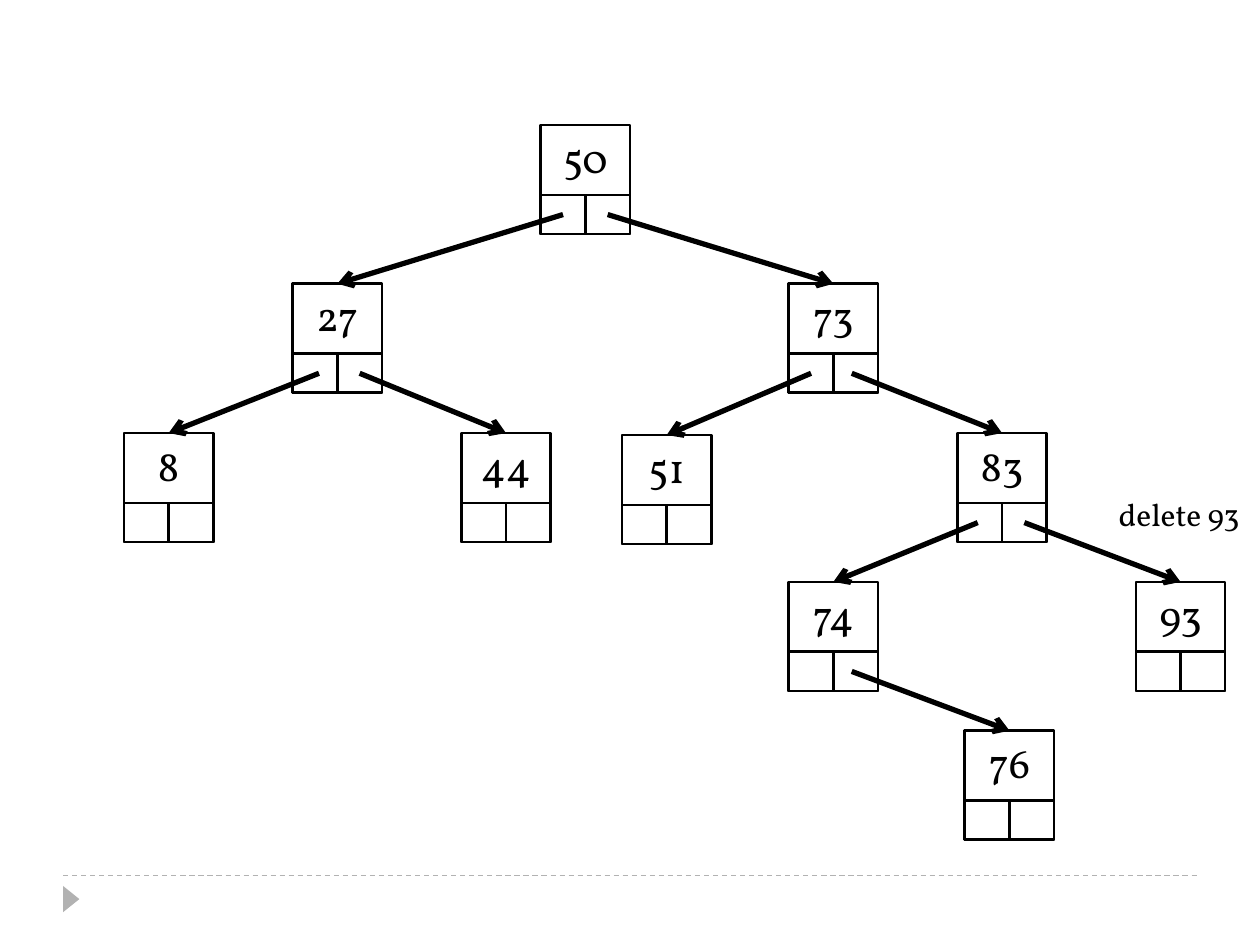
from pptx import Presentation
from pptx.dml.color import RGBColor
from pptx.enum.dml import MSO_LINE
from pptx.enum.shapes import MSO_CONNECTOR, MSO_SHAPE
from pptx.enum.text import MSO_ANCHOR, MSO_AUTO_SIZE, PP_ALIGN
from pptx.oxml.ns import qn
from pptx.util import Cm, Pt
from lxml import etree

RECT, TRIANGLE = MSO_SHAPE.RECTANGLE, MSO_SHAPE.ISOSCELES_TRIANGLE
STRAIGHT, DASH = MSO_CONNECTOR.STRAIGHT, MSO_LINE.DASH
TOP, CENTER, FIT = MSO_ANCHOR.TOP, PP_ALIGN.CENTER, MSO_AUTO_SIZE.SHAPE_TO_FIT_TEXT

COLORS = {"ink": "000000", "rule": "B2B2B2"}
FONT = "Vollkorn"

# key: left, top in cm
NODES = {
    50: (10.9, 2.52),
    27: (5.9, 5.72), 73: (15.9, 5.72),
    8: (2.5, 8.73), 44: (9.3, 8.73), 51: (12.54, 8.77), 83: (19.3, 8.73),
    74: (15.9, 11.73), 93: (22.9, 11.73),
    76: (19.45, 14.73),
}
# parent, child, shift of the start from the middle of its cell in cm
LINKS = [
    (50, 27, 0), (50, 73, 0),
    (27, 8, 0.08), (27, 44, 0),
    (73, 51, 0), (73, 83, -0.08),
    (83, 74, -0.04), (83, 93, 0),
    (74, 76, -0.08),
]
NOTE = "delete 93"
NODE_W, NODE_H, CELL_H = 1.8, 2.2, 0.79
CELL_W = NODE_W / 2
CELL_TOP = NODE_H - CELL_H


def color(name):
    return RGBColor.from_string(COLORS[name])


def style(par, size):
    par.font.name, par.font.size = FONT, Pt(size)
    par.font.color.rgb = color("ink")


def add_box(slide, left, top, width, height):
    box = slide.shapes.add_shape(RECT, Cm(left), Cm(top), Cm(width), Cm(height))
    box.shadow.inherit = False
    box.fill.background()
    box.line.color.rgb, box.line.width = color("ink"), Pt(1.5)
    return box


def add_node(slide, key):
    """Draw a key box with its two child cells; return the key box."""
    left, top = NODES[key]
    box = add_box(slide, left, top, NODE_W, NODE_H)
    frame = box.text_frame
    frame.vertical_anchor = TOP
    par = frame.paragraphs[0]
    par.text, par.alignment = str(key), CENTER
    style(par, 24)
    for side in range(2):
        add_box(slide, left + side * CELL_W, top + CELL_TOP, CELL_W, CELL_H)
    return box


def add_line(slide, start, end, name, width):
    line = slide.shapes.add_connector(STRAIGHT, *map(Cm, start + end))
    line.line.color.rgb, line.line.width = color(name), Pt(width)
    etree.SubElement(line._element.spPr, qn("a:effectLst"))
    return line


def add_link(slide, parent, child, shift, boxes):
    left, top = NODES[parent]
    side = int(child > parent)
    start = (left + (side + 0.5) * CELL_W + shift, top + CELL_TOP + CELL_H / 2)
    line = add_line(slide, start, NODES[child], "ink", 3)
    line.end_connect(boxes[child], 0)
    etree.SubElement(line.line._get_or_add_ln(), qn("a:tailEnd"), type="arrow")


def add_footer(slide):
    rule = add_line(slide, (1.27, 17.65), (24.13, 17.65), "rule", 0.75)
    rule.line.dash_style = DASH
    mark = slide.shapes.add_shape(TRIANGLE, Cm(1.17), Cm(17.96), Cm(0.53), Cm(0.33))
    mark.rotation = 90
    mark.shadow.inherit = False
    mark.fill.solid()
    mark.fill.fore_color.rgb = color("rule")
    mark.line.fill.background()


def add_note(slide):
    frame = slide.shapes.add_textbox(Cm(22.3), Cm(9.86), Cm(2.97), Cm(1.02)).text_frame
    frame.word_wrap, frame.auto_size = False, FIT
    par = frame.paragraphs[0]
    par.text = NOTE
    style(par, 18)


def main():
    deck = Presentation()
    deck.slide_width, deck.slide_height = Cm(25.4), Cm(19.05)
    slide = deck.slides.add_slide(deck.slide_layouts[6])
    add_footer(slide)
    boxes = {key: add_node(slide, key) for key in NODES}
    for parent, child, shift in LINKS:
        add_link(slide, parent, child, shift, boxes)
    add_note(slide)
    deck.save("out.pptx")


if __name__ == "__main__":
    main()
